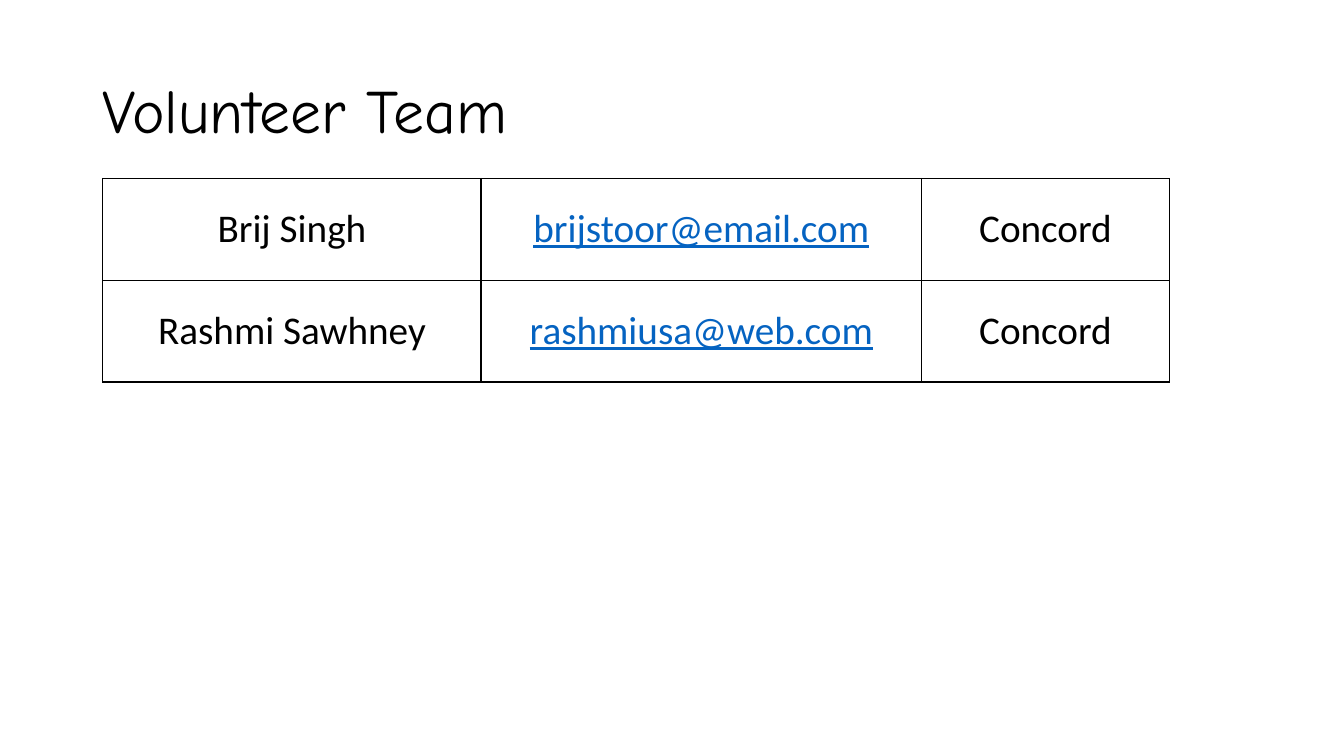
"""Build the volunteer team slide with its contact table."""
from lxml import etree
from pptx import Presentation
from pptx import util as u
from pptx.dml.color import RGBColor
from pptx.enum import text
from pptx.oxml import ns

TITLE = "Volunteer Team"
VOLUNTEERS = [
    ("Brij Singh", "brijstoor@email.com", "Concord"),
    ("Rashmi Sawhney", "rashmiusa@web.com", "Concord"),
]
COLORS = {"ink": "000000", "email": "0563C1", "paper": "FFFFFF"}
SLIDE_SIZE = (13.33, 7.5)
TITLE_BOX = (0.92, 0.4, 11.5, 1.45)
TABLE_ORIGIN = (1.02, 1.77)
COLUMN_WIDTHS = (3.75, 4.37, 2.46)
ROW_HEIGHT = 1.01
EMAIL_COLUMN = 1
BORDER_WIDTH = 1


def write_text(frame, content, font="Calibri", size=28, color="ink",
               underline=False, align=text.PP_ALIGN.CENTER, line_spacing=None):
    """Put one formatted line into a text frame."""
    paragraph = frame.paragraphs[0]
    paragraph.alignment = align
    paragraph.line_spacing = line_spacing
    run = paragraph.add_run()
    run.text = content
    run.font.name = font
    run.font.size = u.Pt(size)
    run.font.bold = False
    run.font.underline = underline
    run.font.color.rgb = RGBColor.from_string(COLORS[color])


def add_borders(cell):
    """Draw a solid line on each side of a cell."""
    properties = cell._tc.get_or_add_tcPr()
    for index, side in enumerate(("lnL", "lnR", "lnT", "lnB")):
        line = etree.Element(ns.qn(f"a:{side}"), w=str(u.Pt(BORDER_WIDTH)))
        fill = etree.SubElement(line, ns.qn("a:solidFill"))
        etree.SubElement(fill, ns.qn("a:srgbClr"), val=COLORS["ink"])
        properties.insert(index, line)


def add_title(slide):
    """Place and format the title placeholder."""
    title = slide.shapes.title
    title.left, title.top, title.width, title.height = map(u.Inches, TITLE_BOX)
    title.text_frame.word_wrap = True
    title.text_frame.vertical_anchor = text.MSO_ANCHOR.MIDDLE
    write_text(title.text_frame, TITLE, font="Comic Neue", size=44,
               align=text.PP_ALIGN.LEFT, line_spacing=0.9)


def add_volunteer_table(slide):
    """Add one row per volunteer."""
    left, top = map(u.Inches, TABLE_ORIGIN)
    width = u.Inches(sum(COLUMN_WIDTHS))
    height = u.Inches(ROW_HEIGHT * len(VOLUNTEERS))
    table = slide.shapes.add_table(
        len(VOLUNTEERS), len(COLUMN_WIDTHS), left, top, width, height).table
    table.first_row = table.horz_banding = False
    for column, column_width in zip(table.columns, COLUMN_WIDTHS):
        column.width = u.Inches(column_width)
    for row_index, volunteer in enumerate(VOLUNTEERS):
        table.rows[row_index].height = u.Inches(ROW_HEIGHT)
        for column_index, content in enumerate(volunteer):
            cell = table.cell(row_index, column_index)
            cell.fill.solid()
            cell.fill.fore_color.rgb = RGBColor.from_string(COLORS["paper"])
            cell.vertical_anchor = text.MSO_ANCHOR.MIDDLE
            cell.margin_left = cell.margin_right = u.Inches(0.03)
            cell.margin_top = cell.margin_bottom = u.Inches(0.02)
            is_email = column_index == EMAIL_COLUMN
            write_text(cell.text_frame, content, underline=is_email,
                       color="email" if is_email else "ink")
            add_borders(cell)


def main():
    presentation = Presentation()
    presentation.slide_width, presentation.slide_height = map(u.Inches, SLIDE_SIZE)
    slide = presentation.slides.add_slide(presentation.slide_layouts[5])
    add_title(slide)
    add_volunteer_table(slide)
    presentation.save("out.pptx")


if __name__ == "__main__":
    main()
